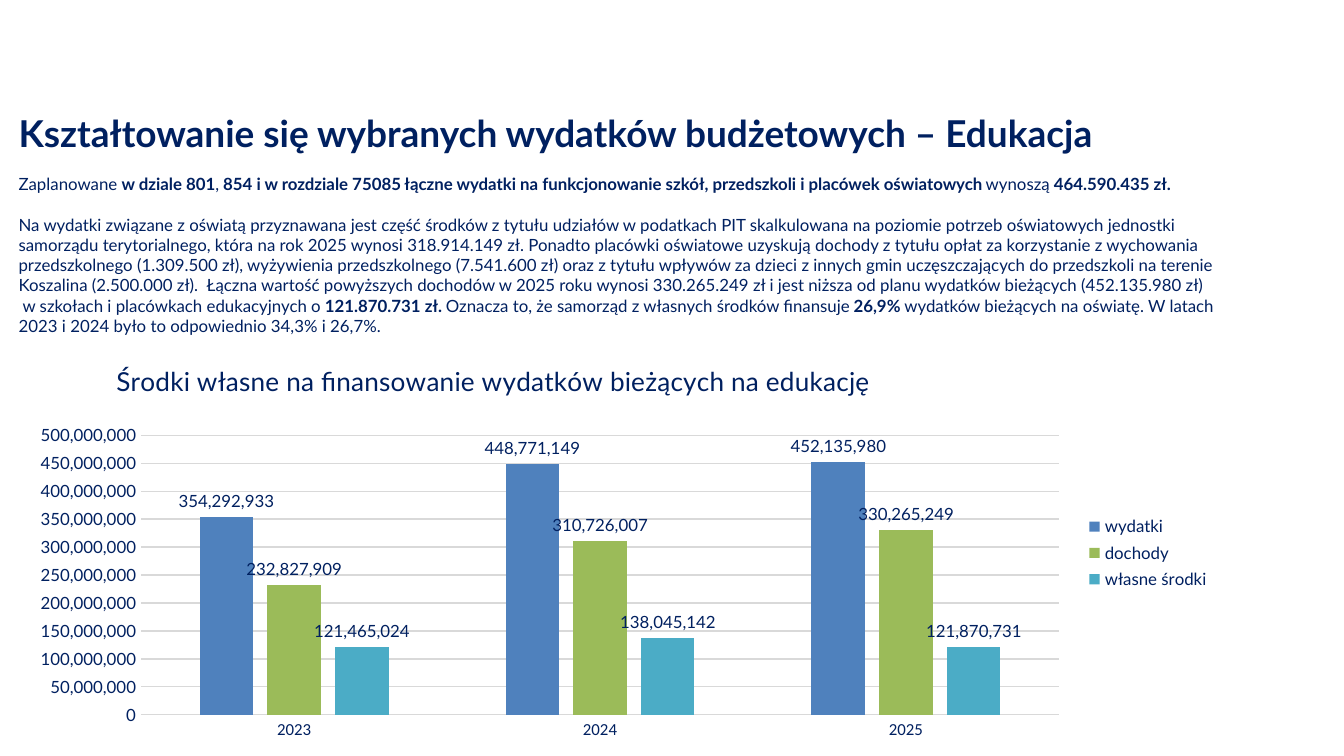
from pptx import Presentation
from pptx.chart.data import CategoryChartData
from pptx.dml.color import RGBColor
from pptx.enum.chart import XL_CHART_TYPE as ChartType, XL_LABEL_POSITION as LabelPos
from pptx.enum.chart import XL_LEGEND_POSITION as LegendPos, XL_TICK_MARK as Tick
from pptx.oxml import parse_xml
from pptx.oxml.ns import nsdecls, qn
from pptx.util import Inches, Pt

NAVY, GREY = "002060", "D9D9D9"
CHART_WIDTH, CHART_HEIGHT = 8.98, 2.91


def style(font, size, name="Lato", bold=False):
    font.size, font.name, font.bold = Pt(size), name, bold
    font.color.rgb = RGBColor.from_string(NAVY)


def set_layout(element, index, **inches):
    """Place a chart part by inches from the chart's top left corner."""
    for old in element.findall(qn("c:layout")):
        element.remove(old)
    target = '<c:layoutTarget val="inner"/>' if "w" in inches else ""
    modes = '<c:xMode val="edge"/><c:yMode val="edge"/>'
    values = "".join(
        f'<c:{key} val="{length / (CHART_WIDTH if key in "xw" else CHART_HEIGHT)}"/>'
        for key, length in inches.items())
    element.insert(index, parse_xml(
        f'<c:layout {nsdecls("c")}><c:manualLayout>{target}{modes}{values}'
        "</c:manualLayout></c:layout>"))


# Widescreen page, 16 to 9
deck = Presentation()
deck.slide_width, deck.slide_height = Inches(10), Inches(10 * 9 / 16)
page = deck.slides.add_slide(deck.slide_layouts[6])

# Heading and text: size, space before, runs of (text, bold)
paragraphs = [
    (19.8, 0, [("Kształtowanie się wybranych wydatków budżetowych – Edukacja", True)]),
    (9, 10.5, [
        ("Zaplanowane ", False),
        ("w dziale 801", True),
        (",", False),
        (" 854 i w rozdziale 75085 łączne wydatki na funkcjonowanie szkół, "
         "przedszkoli i placówek oświatowych ", True),
        ("wynoszą", False),
        (" 464.590.435 zł.", True),
    ]),
    (9, 10.8, [
        ("Na wydatki związane z oświatą przyznawana jest część środków z tytułu udziałów "
         "w podatkach PIT skalkulowana na poziomie potrzeb oświatowych jednostki samorządu "
         "terytorialnego, która na rok 2025 wynosi 318.914.149 zł. Ponadto placówki oświatowe "
         "uzyskują dochody z tytułu opłat za korzystanie z wychowania przedszkolnego "
         "(1.309.500 zł), wyżywienia przedszkolnego (7.541.600 zł) oraz z tytułu wpływów za "
         "dzieci z innych gmin uczęszczających do przedszkoli na terenie Koszalina "
         "(2.500.000 zł).  Łączna wartość powyższych dochodów w 2025 roku wynosi "
         "330.265.249 zł i jest niższa od planu wydatków bieżących (452.135.980 zł)", False),
        None,  # line break
        (" w szkołach i placówkach edukacyjnych o ", False),
        ("121.870.731 zł. ", True),
        ("Oznacza to, że samorząd z własnych środków finansuje", False),
        (" 26,9%", True),
        (" wydatków bieżących na oświatę. W latach 2023 i 2024 było to odpowiednio "
         "34,3% i 26,7%.", False),
    ]),
]
box = page.shapes.add_textbox(Inches(0.04), Inches(0.77), Inches(9.21), Inches(1.73))
frame = box.text_frame
frame.word_wrap = True
for number, (size, before, runs) in enumerate(paragraphs):
    para = frame.add_paragraph() if number else frame.paragraphs[0]
    if before:
        para.space_before = Pt(before)
    for run in runs:
        if run is None:
            para.add_line_break()
            continue
        span = para.add_run()
        span.text = run[0]
        style(span.font, size, bold=run[1])

# Chart data
series_rows = [
    ("wydatki", "4F81BD", (354292933, 448771149, 452135980)),
    ("dochody", "9BBB59", (232827909, 310726007, 330265249)),
    ("własne środki", "4BACC6", (121465024, 138045142, 121870731)),
]
data = CategoryChartData(number_format="#,##0")
data.categories = ["2023", "2024", "2025"]
for name, color, values in series_rows:
    data.add_series(name, values)
chart = page.shapes.add_chart(
    ChartType.COLUMN_CLUSTERED, Inches(0.12), Inches(2.66),
    Inches(CHART_WIDTH), Inches(CHART_HEIGHT), data).chart
style(chart.font, 10, "Calibri")

# Chart title
chart.has_title = True
span = chart.chart_title.text_frame.paragraphs[0].add_run()
span.text = "Środki własne na finansowanie wydatków bieżących na edukację"
style(span.font, 14)
set_layout(chart.chart_title._element, 1, x=0.71, y=0)

# Columns and their labels
plot = chart.plots[0]
plot.gap_width, plot.overlap, plot.vary_by_categories = 219, -27, False
for series, (name, color, values) in zip(plot.series, series_rows):
    series.format.fill.solid()
    series.format.fill.fore_color.rgb = RGBColor.from_string(color)
    labels = series.data_labels
    labels.show_value = True
    labels.position = LabelPos.OUTSIDE_END
    labels.number_format, labels.number_format_is_linked = "#,##0", False
    style(labels.font, 9)
set_layout(chart._chartSpace.chart.plotArea, 0, x=0.93, y=0.58, w=6.83, h=2.08)

# Axes
years, amounts = chart.category_axis, chart.value_axis
for axis, font_name in ((years, "Calibri"), (amounts, "Lato")):
    axis.major_tick_mark = axis.minor_tick_mark = Tick.NONE
    style(axis.tick_labels.font, 9, font_name)
amounts.minimum_scale, amounts.maximum_scale, amounts.major_unit = 0, 500000000, 50000000
amounts.tick_labels.number_format = "#,##0"
amounts.tick_labels.number_format_is_linked = False
amounts.format.line.fill.background()
for line in (years.format.line, amounts.major_gridlines.format.line):
    line.color.rgb = RGBColor.from_string(GREY)
    line.width = Pt(0.75)

# Legend
chart.has_legend = True
chart.legend.position = LegendPos.RIGHT
chart.legend.include_in_layout = False
style(chart.legend.font, 9)

deck.save("out.pptx")
